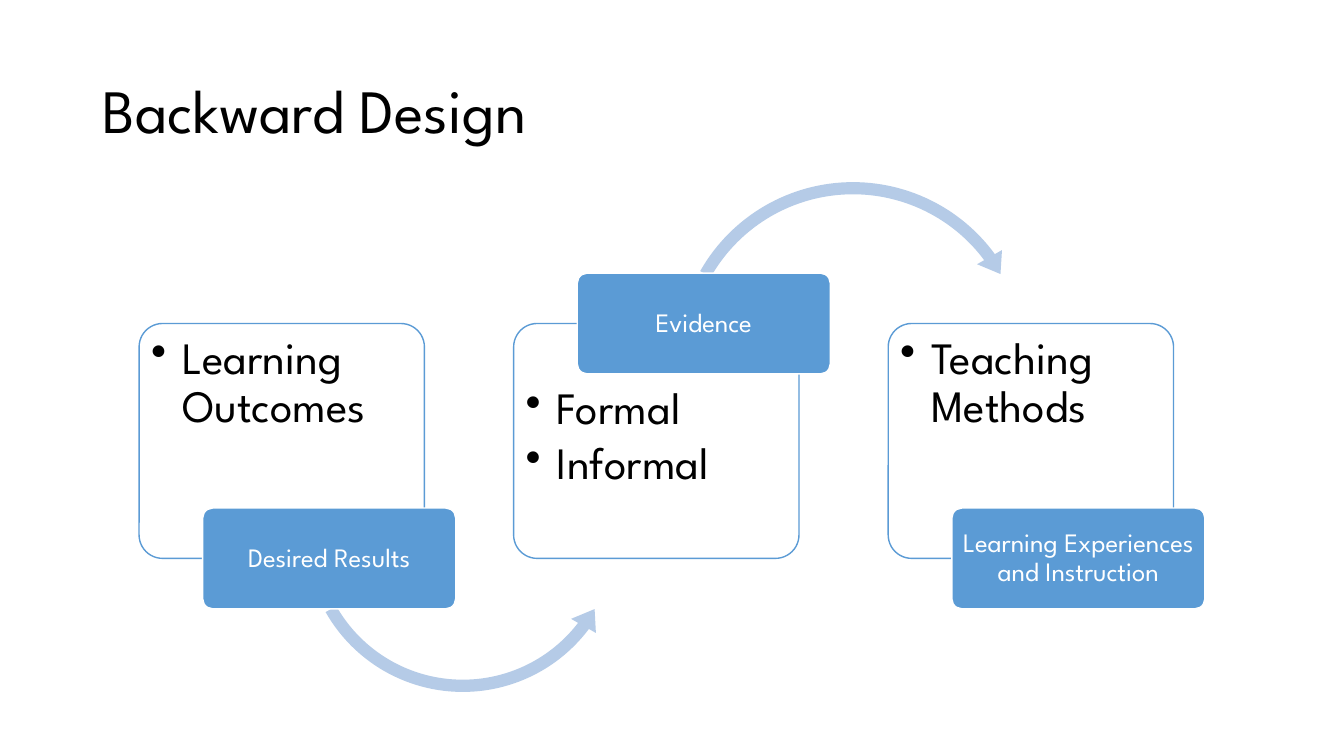
from dataclasses import dataclass

from lxml import etree
from pptx import Presentation
from pptx.dml.color import RGBColor
from pptx.enum.shapes import MSO_SHAPE
from pptx.enum.text import MSO_ANCHOR, PP_ALIGN
from pptx.oxml.ns import qn
from pptx.util import Inches, Pt

ROUNDED = MSO_SHAPE.ROUNDED_RECTANGLE
UNDER_ARC, OVER_ARC = MSO_SHAPE.LEFT_CIRCULAR_ARROW, MSO_SHAPE.CIRCULAR_ARROW
TOP, MIDDLE = MSO_ANCHOR.TOP, MSO_ANCHOR.MIDDLE
LEFT, CENTER = PP_ALIGN.LEFT, PP_ALIGN.CENTER


@dataclass(frozen=True)
class Theme:
    font: str = "League Spartan"
    ink: str = "000000"
    paper: str = "FFFFFF"
    blue: str = "5B9BD5"
    pale_blue: str = "B5CBE7"
    title_size: int = 44
    bullet_size: int = 32
    label_size: int = 19


THEME = Theme()

TITLE = "Backward Design"
# Arrow: preset, centre x, centre y, diameter, adjustments
STEPS = [
    {"label": "Desired Results", "bullets": ["Learning Outcomes"], "label_on_top": False,
     "arrow": (UNDER_ARC, 4.59, 5.3, 3.29, (0.037, 4.574, 22.329, 90.245, 0.043))},
    {"label": "Evidence", "bullets": ["Formal", "Informal"], "label_on_top": True,
     "arrow": (OVER_ARC, 8.46, 3.55, 3.65, (0.033, 4.086, 194.159, 125.755, 0.039))},
    {"label": "Learning Experiences and Instruction", "bullets": ["Teaching Methods"],
     "label_on_top": False, "arrow": None},
]

FIRST_LEFT, CARD_TOP, PITCH = 1.38, 3.21, 3.715
CARD_WIDTH, CARD_HEIGHT = 2.83, 2.33
LABEL_WIDTH, LABEL_HEIGHT, LABEL_SHIFT = 2.51, 1.0, 0.63
BULLET_INDENT = 0.31


def color(value):
    return RGBColor.from_string(value)


def add_panel(page, preset, box, fill, line=None, adjustments=(0.1,)):
    shape = page.shapes.add_shape(preset, *map(Inches, box))
    shape.shadow.inherit = False
    for index, value in enumerate(adjustments):
        shape.adjustments[index] = value
    shape.fill.solid()
    shape.fill.fore_color.rgb = color(fill)
    if line:
        shape.line.color.rgb = color(line)
        shape.line.width = Pt(1)
    else:
        shape.line.fill.background()
    return shape


def make_bullet(para):
    properties = para._p.get_or_add_pPr()
    properties.set("marL", str(Inches(BULLET_INDENT)))
    properties.set("indent", str(-Inches(BULLET_INDENT)))
    etree.SubElement(properties, qn("a:buChar")).set("char", "•")


def write(shape, lines, size, ink, margins, anchor=MIDDLE, align=LEFT, bulleted=False):
    """Fill a shape with paragraphs; margins are left, top, right, bottom."""
    frame = shape.text_frame
    frame.word_wrap = True
    frame.vertical_anchor = anchor
    (frame.margin_left, frame.margin_top,
     frame.margin_right, frame.margin_bottom) = map(Inches, margins)
    for index, line in enumerate(lines):
        para = frame.add_paragraph() if index else frame.paragraphs[0]
        if bulleted:
            make_bullet(para)
        para.alignment = align
        para.line_spacing = 0.9
        para.space_after = Pt(5 if bulleted else 0)
        span = para.add_run()
        span.text = line
        span.font.name = THEME.font
        span.font.size = Pt(size)
        span.font.color.rgb = color(ink)


def add_step(page, index, step):
    left = FIRST_LEFT + index * PITCH
    on_top = step["label_on_top"]

    card = add_panel(page, ROUNDED, (left, CARD_TOP, CARD_WIDTH, CARD_HEIGHT),
                     THEME.paper, THEME.blue)
    text_top = LABEL_HEIGHT / 2 + 0.05 if on_top else 0.05
    write(card, step["bullets"], THEME.bullet_size, THEME.ink,
          (0.05, text_top, 0.05, 0.05), TOP, bulleted=True)

    if step["arrow"]:
        preset, x, y, diameter, adjustments = step["arrow"]
        add_panel(page, preset, (x - diameter / 2, y - diameter / 2, diameter, diameter),
                  THEME.pale_blue, adjustments=adjustments)

    edge = CARD_TOP if on_top else CARD_TOP + CARD_HEIGHT
    label = add_panel(page, ROUNDED, (left + LABEL_SHIFT, edge - LABEL_HEIGHT / 2,
                                      LABEL_WIDTH, LABEL_HEIGHT), THEME.blue, THEME.paper)
    write(label, [step["label"]], THEME.label_size, THEME.paper,
          (0.04, 0.03, 0.04, 0.03), align=CENTER)


def main():
    deck = Presentation()
    deck.slide_width, deck.slide_height = Inches(13.33), Inches(7.5)
    page = deck.slides.add_slide(deck.slide_layouts[6])
    for index, step in enumerate(STEPS):
        add_step(page, index, step)
    title = page.shapes.add_textbox(*map(Inches, (0.92, 0.4, 11.5, 1.45)))
    write(title, [TITLE], THEME.title_size, THEME.ink, (0.1, 0.05, 0.1, 0.05))
    deck.save("out.pptx")


if __name__ == "__main__":
    main()
